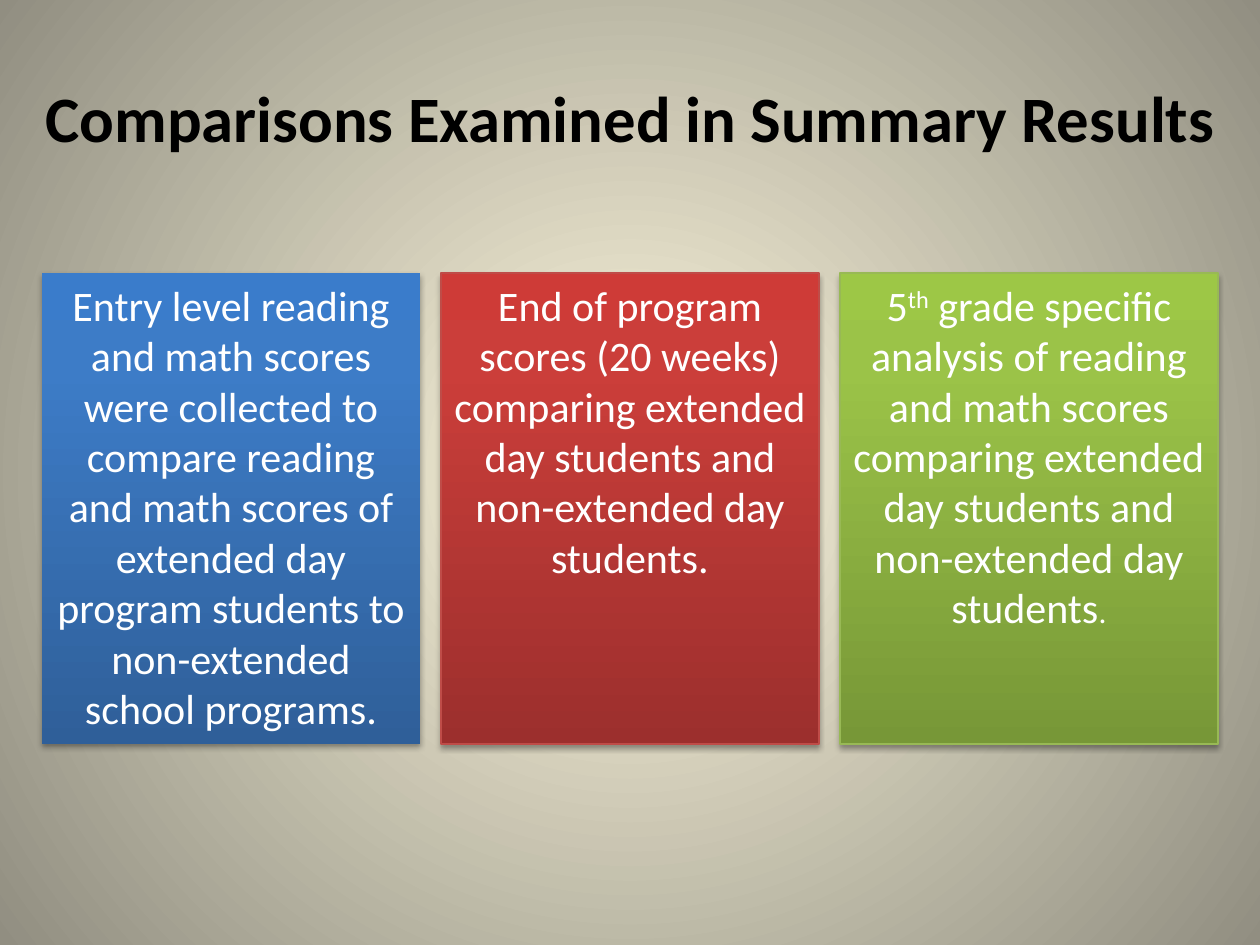
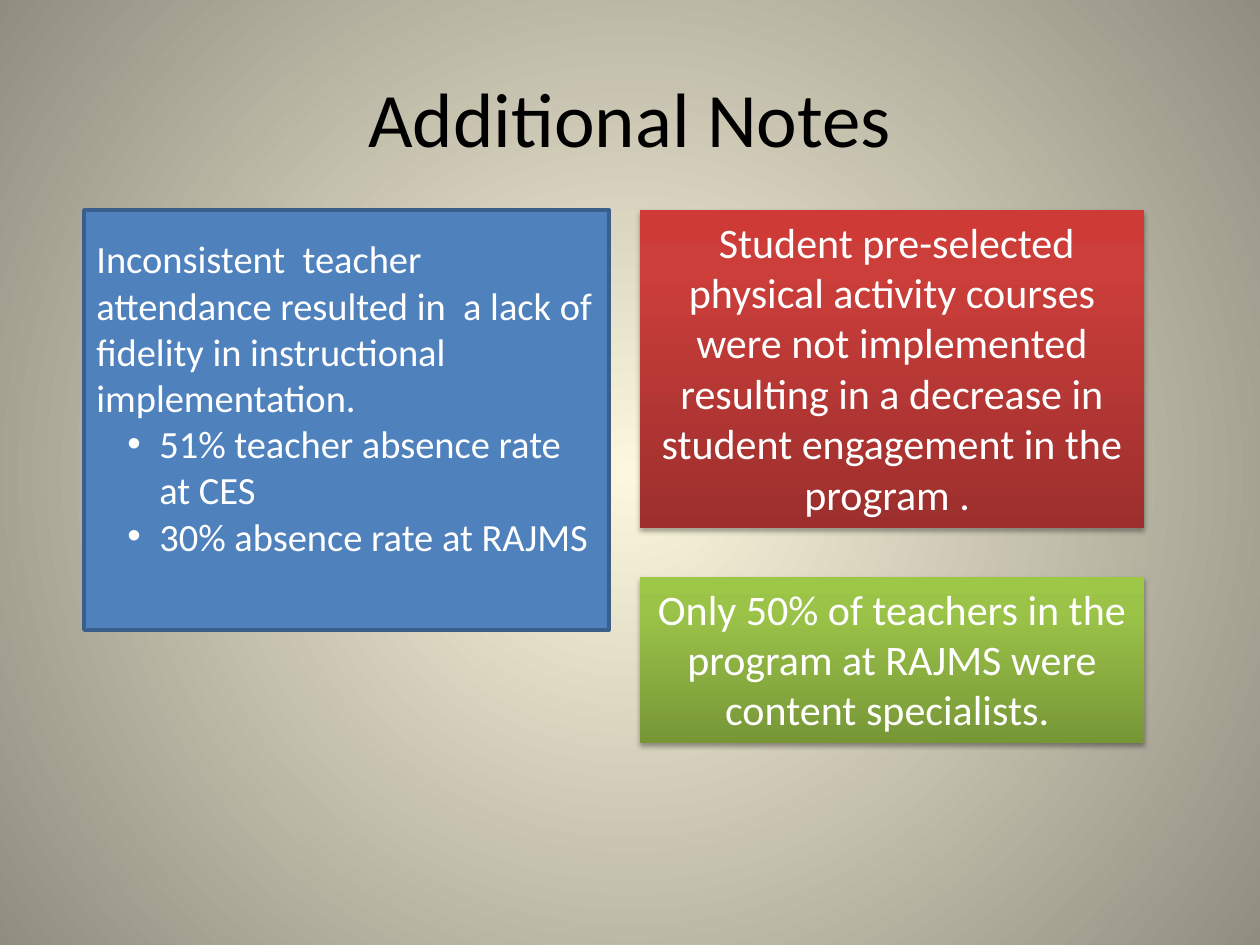
from lxml.etree import SubElement as Sub
from pptx import Presentation
from pptx.dml.color import RGBColor
from pptx.enum.shapes import MSO_SHAPE as Shape
from pptx.enum.text import MSO_ANCHOR as Anchor, PP_ALIGN as Align
from pptx.oxml.ns import qn
from pptx.util import Pt

PX = 914400 / 126
FONT = "Calibri"
WHITE, BLACK = "FFFFFF", "000000"
GLOW = [(0, "FCF7DD"), (100, "918E81")]
BLUE = [(0, "2F5F99"), (80, "3D7CC7"), (100, "3A7CCB")]
RED = [(0, "9C2F2D"), (80, "CB3E3A"), (100, "CE3B37")]
GREEN = [(0, "779737"), (80, "9BC348"), (100, "9DC746")]


def px(*nums):
    return [round(n * PX) for n in nums]


def rgb(code):
    return RGBColor.from_string(code)


def style(item, form):
    for name, value in form.items():
        setattr(item, name, value)


def grade(fill, owner, stops, glow=False):
    """Fill with colour stops, upwards or spreading out from the centre."""
    fill.gradient()
    node = owner.element.find(".//" + qn("a:gradFill"))
    for child in list(node):
        node.remove(child)
    group = Sub(node, qn("a:gsLst"))
    for pos, code in stops:
        stop = Sub(group, qn("a:gs"), pos=str(pos * 1000))
        Sub(stop, qn("a:srgbClr"), val=code)
    if glow:
        way = Sub(node, qn("a:path"), path="circle")
        Sub(way, qn("a:fillToRect"), {side: "50000" for side in "ltrb"})
    else:
        Sub(node, qn("a:lin"), ang="16200000", scaled="0")


def shade(box):
    """Add the soft shadow below a card."""
    effects = box.element.spPr.find(qn("a:effectLst"))
    drop = Sub(effects, qn("a:outerShdw"), blurRad=str(Pt(3.1)),
               dist=str(Pt(1.8)), dir="5400000", rotWithShape="0")
    tint = Sub(drop, qn("a:srgbClr"), val=BLACK)
    Sub(tint, qn("a:alpha"), val="35000")


def write(para, runs, size, color=WHITE, align=Align.CENTER, bold=False):
    """Add runs, each a text with its own font values."""
    para.alignment = align
    for text, form in runs:
        run = para.add_run()
        run.text = text
        style(run.font, {"name": FONT, "size": Pt(size), "bold": bold} | form)
        run.font.color.rgb = rgb(color)
    return para


def bullet(para):
    props = para._p.get_or_add_pPr()
    left, hang = px(63, 32)
    props.set("marL", str(left))
    props.set("indent", str(-hang))
    Sub(props, qn("a:buFont"), typeface="Arial")
    Sub(props, qn("a:buChar"), char="•")


def page(deck, title, size, bold=False):
    slide = deck.slides.add_slide(deck.slide_layouts[6])
    grade(slide.background.fill, slide, GLOW, glow=True)
    frame = slide.shapes.add_textbox(*px(32, 38, 1196, 157)).text_frame
    style(frame, {"word_wrap": True, "vertical_anchor": Anchor.MIDDLE})
    write(frame.paragraphs[0], [(title, {})], size, BLACK, bold=bold)
    return slide


def block(slide, area, edge=None, width=0.75):
    box = slide.shapes.add_shape(Shape.RECTANGLE, *px(*area))
    if edge:
        box.line.color.rgb = rgb(edge)
        box.line.width = Pt(width)
    else:
        box.line.fill.background()
    box.shadow.inherit = False
    return box


def card(slide, area, stops, runs, edge=None):
    box = block(slide, area, edge)
    grade(box.fill, box, stops)
    shade(box)
    style(box.text_frame, {"word_wrap": True, "vertical_anchor": Anchor.TOP})
    write(box.text_frame.paragraphs[0], runs, 24)


def panel(slide, area, lead, points):
    box = block(slide, area, "3A5F8C", 2)
    box.fill.solid()
    box.fill.fore_color.rgb = rgb("4F81BD")
    frame = box.text_frame
    style(frame, {"word_wrap": True, "vertical_anchor": Anchor.MIDDLE,
                  "margin_bottom": px(52)[0]})
    write(frame.paragraphs[0], [(lead, {})], 22, align=Align.LEFT)
    for point in points:
        para = frame.add_paragraph()
        bullet(para)
        write(para, [(point, {})], 22, align=Align.LEFT)


def compare(deck):
    slide = page(deck, "Comparisons Examined in Summary Results", 37, True)
    cards = [
        (BLUE, None, [("Entry level reading and math scores were collected to "
                       "compare reading and math scores of extended day program "
                       "students to non-extended school programs.", {})]),
        (RED, "BF4C48", [("End of program scores (20 weeks) comparing extended "
                          "day students and non-extended day students.", {})]),
        (GREEN, "98B955", [("5", {}), ("th", {"raised": True}),
                           (" grade specific analysis of reading and math scores "
                            "comparing extended day students and non-extended "
                            "day students", {}), (".", {"size": Pt(18)})]),
    ]
    for col, (stops, edge, runs) in enumerate(cards):
        card(slide, (42 + 399 * col, 273, 378, 471), stops, runs, edge)
    for shape in slide.shapes:
        for run in shape.text_frame.paragraphs[0].runs:
            if run.text == "th":
                run.font._element.set("baseline", "30000")


def notes(deck):
    slide = page(deck, "Additional Notes", 44)
    card(slide, (640, 577, 504, 166), GREEN,
         [("Only 50% of teachers in the program at RAJMS were content "
           "specialists. ", {})])
    card(slide, (640, 210, 504, 318), RED,
         [(" Student pre-selected physical activity courses were not "
           "implemented resulting in a decrease in student engagement in "
           "the program . ", {})])
    panel(slide, (84, 210, 525, 420),
          "Inconsistent  teacher attendance resulted in  a lack of fidelity "
          "in instructional implementation.",
          ["51% teacher absence rate at CES", "30% absence rate at RAJMS"])


def main():
    deck = Presentation()
    wide, high = px(1260, 945)
    style(deck, {"slide_width": wide, "slide_height": high})
    compare(deck)
    notes(deck)
    deck.save("out.pptx")


if __name__ == "__main__":
    main()
